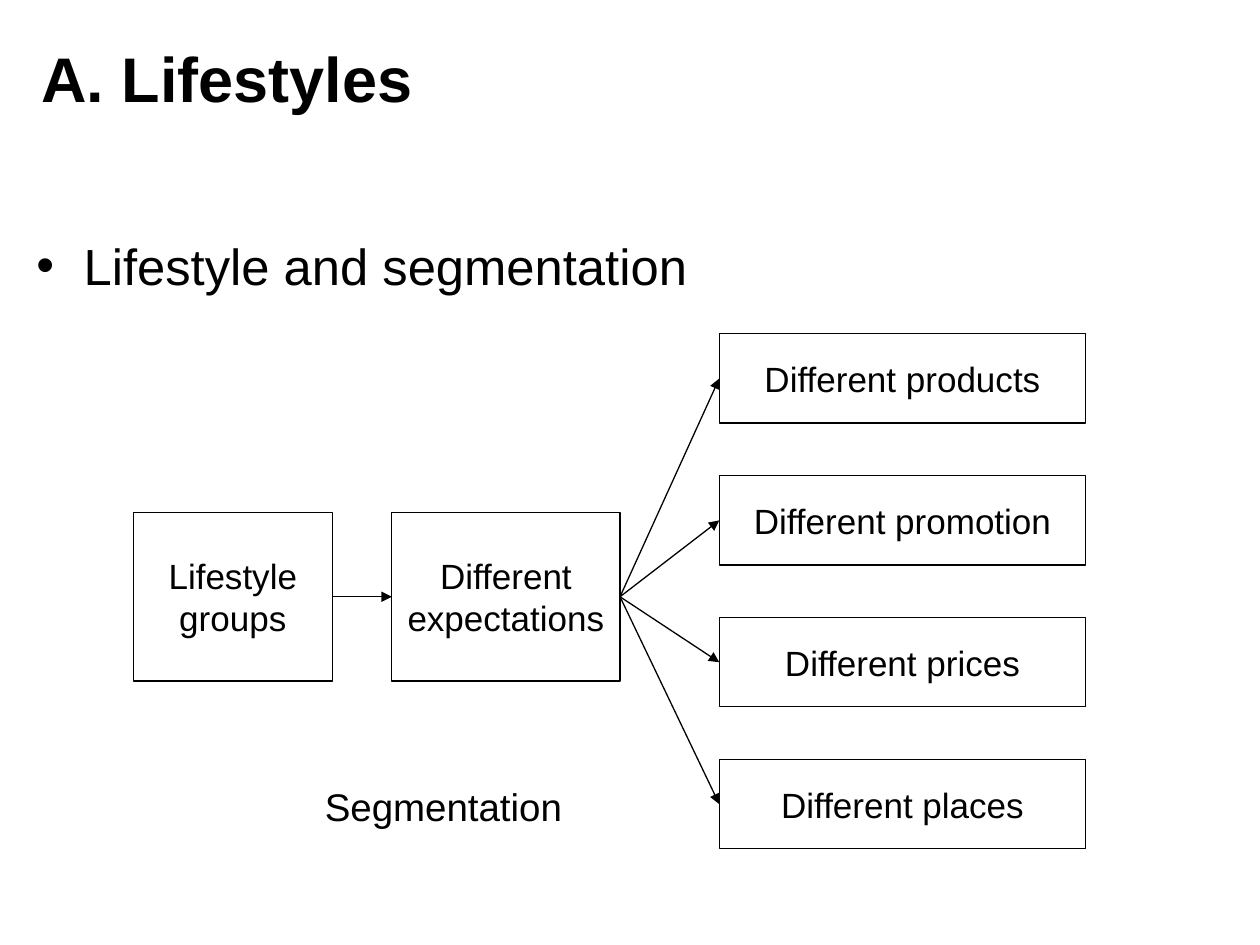
"""Build a slide that shows how lifestyle groups lead to segmentation."""
from lxml.etree import SubElement
from pptx import Presentation
from pptx.dml.color import RGBColor
from pptx.enum.shapes import MSO_CONNECTOR, MSO_SHAPE
from pptx.enum.text import MSO_ANCHOR, MSO_AUTO_SIZE, PP_ALIGN
from pptx.oxml.ns import qn
from pptx.util import Cm, Pt

HEADING = "A. Lifestyles"
TOPIC = "Lifestyle and segmentation"
CAPTION = "Segmentation"
CAUSES = [("Lifestyle groups", 2.69, 4.01), ("Different expectations", 7.9, 4.6)]
RESPONSES = ["Different products", "Different promotion",
             "Different prices", "Different places"]

BLACK = RGBColor(0, 0, 0)
FONT = "Arial"
CAUSE_TOP, CAUSE_HEIGHT = 10.33, 3.4
RESPONSE_LEFT, RESPONSE_TOP = 14.5, 6.73
RESPONSE_WIDTH, RESPONSE_HEIGHT, RESPONSE_STEP = 7.39, 1.8, 2.86
LEFT_SITE, RIGHT_SITE = 1, 3


def write(frame, text, size, align=PP_ALIGN.LEFT, bold=False):
    paragraph = frame.paragraphs[0]
    paragraph.alignment = align
    run = paragraph.add_run()
    run.text = text
    run.font.name = FONT
    run.font.size = Pt(size)
    run.font.bold = bold
    run.font.color.rgb = BLACK
    return paragraph


def place(shape, left, top, width, height):
    shape.left, shape.top = Cm(left), Cm(top)
    shape.width, shape.height = Cm(width), Cm(height)


def add_box(slide, text, left, top, width, height):
    box = slide.shapes.add_shape(
        MSO_SHAPE.RECTANGLE, Cm(left), Cm(top), Cm(width), Cm(height))
    box.shadow.inherit = False
    box.fill.background()
    box.line.color.rgb = BLACK
    box.line.width = Pt(0.75)
    box.text_frame.word_wrap = True
    box.text_frame.vertical_anchor = MSO_ANCHOR.MIDDLE
    write(box.text_frame, text, 20, PP_ALIGN.CENTER)
    return box


def add_arrow(slide, source, target):
    arrow = slide.shapes.add_connector(MSO_CONNECTOR.STRAIGHT, 0, 0, 0, 0)
    arrow.begin_connect(source, RIGHT_SITE)
    arrow.end_connect(target, LEFT_SITE)
    arrow.line.color.rgb = BLACK
    arrow.line.width = Pt(0.75)
    SubElement(arrow.line._get_or_add_ln(), qn("a:tailEnd"), type="triangle")
    SubElement(arrow._element.spPr, qn("a:effectLst"))


def main():
    prs = Presentation()
    prs.slide_width, prs.slide_height = Cm(25.4), Cm(19.05)
    slide = prs.slides.add_slide(prs.slide_layouts[1])

    title, body = slide.placeholders
    place(title, 0.58, 0.38, 20.4, 2.36)
    title.text_frame.vertical_anchor = MSO_ANCHOR.MIDDLE
    write(title.text_frame, HEADING, 36, bold=True)

    place(body, 0.48, 4.6, 24.41, 1.45)
    topic = write(body.text_frame, TOPIC, 29)
    properties = topic._p.get_or_add_pPr()
    properties.set("marL", str(Cm(0.95)))
    properties.set("indent", str(Cm(-0.95)))
    SubElement(properties, qn("a:buFont"), typeface=FONT)
    SubElement(properties, qn("a:buChar"), char="•")
    for placeholder in (title, body):
        placeholder.text_frame.auto_size = MSO_AUTO_SIZE.NONE

    groups, expectations = [
        add_box(slide, text, left, CAUSE_TOP, width, CAUSE_HEIGHT)
        for text, left, width in CAUSES]
    responses = [
        add_box(slide, text, RESPONSE_LEFT, RESPONSE_TOP + row * RESPONSE_STEP,
                RESPONSE_WIDTH, RESPONSE_HEIGHT)
        for row, text in enumerate(RESPONSES)]

    add_arrow(slide, groups, expectations)
    for response in responses:
        add_arrow(slide, expectations, response)

    caption = slide.shapes.add_textbox(Cm(6.3), Cm(15.67), Cm(5.31), Cm(1.19))
    caption.text_frame.word_wrap = False
    caption.text_frame.auto_size = MSO_AUTO_SIZE.SHAPE_TO_FIT_TEXT
    write(caption.text_frame, CAPTION, 22)

    prs.save("out.pptx")


if __name__ == "__main__":
    main()
